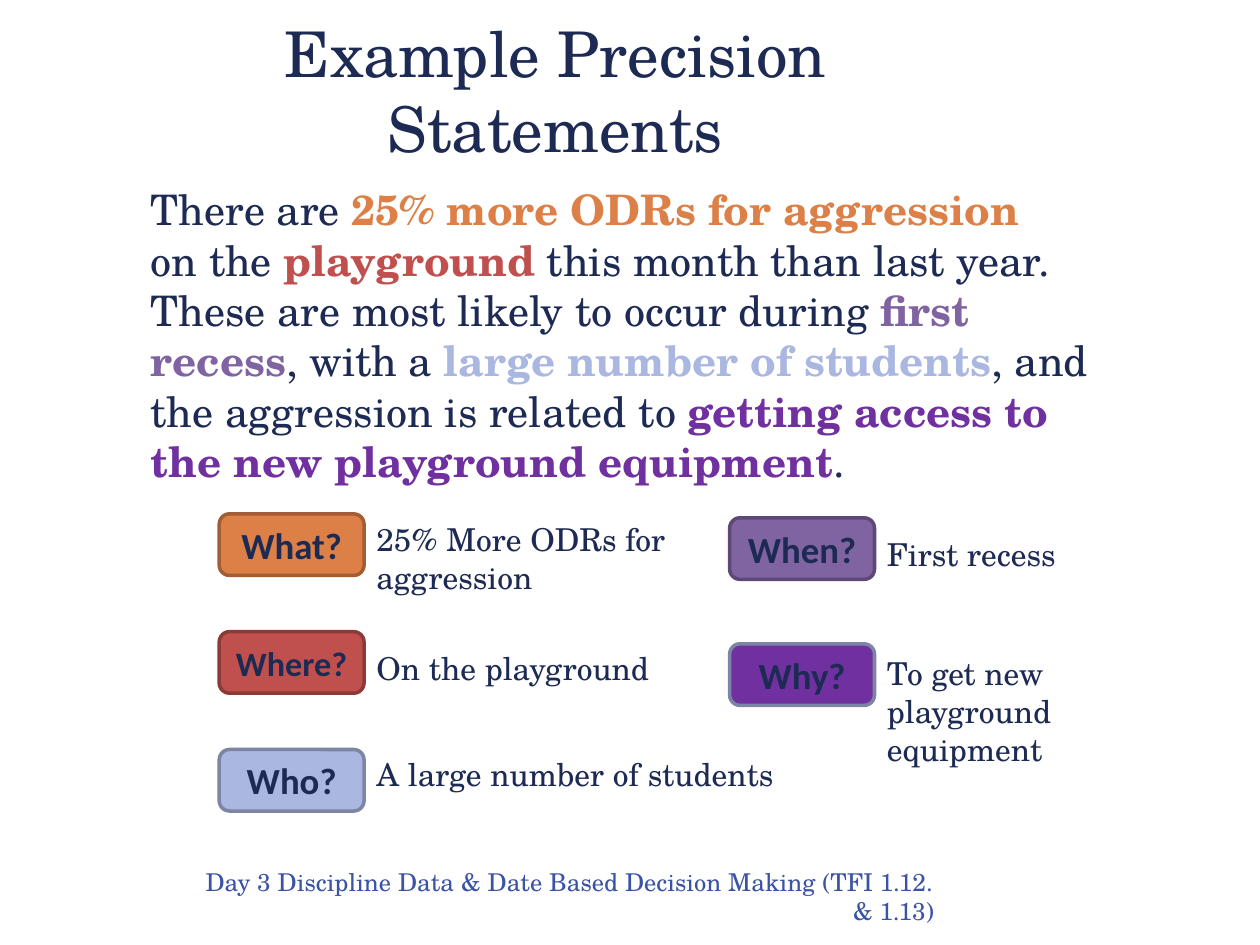
from dataclasses import dataclass

from pptx import Presentation
from pptx.dml.color import RGBColor
from pptx.enum.shapes import MSO_SHAPE
from pptx.enum.text import MSO_ANCHOR, PP_ALIGN
from pptx.util import Cm, Pt


@dataclass(frozen=True)
class Theme:
    serif: str = "TeX Gyre Schola"
    sans: str = "Calibri"
    ink: str = "1D2A53"
    footer: str = "3A53A5"
    what: str = "DD8047"
    what_edge: str = "A15D33"
    where: str = "C0504D"
    where_edge: str = "8C3A38"
    who: str = "AAB7E1"
    when: str = "8064A2"
    when_edge: str = "5D4876"
    why: str = "7030A0"
    pale_edge: str = "7C85A4"
    title_size: float = 36
    statement_size: float = 24
    badge_size: float = 21
    small_badge_size: float = 19.5
    answer_size: float = 18
    footer_size: float = 14


THEME = Theme()
LEFT_COLUMN, RIGHT_COLUMN = 4.42, 14.71
FIRST_ROW, ROW_STEP = 10.36, 2.375
BADGE_WIDTH, BADGE_HEIGHT = 2.92, 1.24


def add_run(paragraph, wording, size, color=THEME.ink, bold=False, face=THEME.serif):
    run = paragraph.add_run()
    run.text = wording
    run.font.name = face
    run.font.size = Pt(size)
    run.font.bold = bold
    run.font.color.rgb = RGBColor.from_string(color)


def add_text_area(slide, left, top, width, height,
                  align=PP_ALIGN.LEFT, anchor=MSO_ANCHOR.TOP):
    area = slide.shapes.add_textbox(Cm(left), Cm(top), Cm(width), Cm(height))
    frame = area.text_frame
    frame.word_wrap = True
    frame.vertical_anchor = anchor
    paragraph = frame.paragraphs[0]
    paragraph.alignment = align
    return paragraph


def add_badge(slide, left, top, question, fill, edge, size):
    badge = slide.shapes.add_shape(
        MSO_SHAPE.ROUNDED_RECTANGLE, Cm(left), Cm(top), Cm(BADGE_WIDTH), Cm(BADGE_HEIGHT))
    badge.shadow.inherit = False
    badge.fill.solid()
    badge.fill.fore_color.rgb = RGBColor.from_string(fill)
    badge.line.color.rgb = RGBColor.from_string(edge)
    badge.line.width = Pt(2)
    badge.text_frame.vertical_anchor = MSO_ANCHOR.MIDDLE
    label = badge.text_frame.paragraphs[0]
    label.alignment = PP_ALIGN.CENTER
    add_run(label, question, size, bold=True, face=THEME.sans)


def add_answer(slide, left, top, width, height, answer):
    paragraph = add_text_area(slide, left + BADGE_WIDTH, top, width, height)
    add_run(paragraph, answer, THEME.answer_size)


def add_statement(slide):
    statement = add_text_area(slide, 2.79, 3.58, 20.09, 11.38)

    def plain(wording):
        add_run(statement, wording, THEME.statement_size)

    def strong(wording, color):
        add_run(statement, wording, THEME.statement_size, color, bold=True)

    plain("There are ")
    strong("25% more ODRs for aggression", THEME.what)
    statement.add_line_break()
    plain("on the ")
    strong("playground", THEME.where)
    plain(" this month than last year. These are most likely to occur during ")
    strong("first recess", THEME.when)
    plain(", with a ")
    strong("large number of students", THEME.who)
    plain(", and the aggression is related to ")
    strong("getting access to the new playground equipment", THEME.why)
    plain(".")


def add_questions(slide):
    second_row, third_row = FIRST_ROW + ROW_STEP, FIRST_ROW + 2 * ROW_STEP
    normal, small = THEME.badge_size, THEME.small_badge_size
    questions = [
        (LEFT_COLUMN, FIRST_ROW, "What?", THEME.what, THEME.what_edge, normal,
         10.36, 7.01, 1.8, "25% More ODRs for aggression"),
        (LEFT_COLUMN, second_row, "Where?", THEME.where, THEME.where_edge, small,
         12.95, 7.01, 1.02, "On the playground"),
        (LEFT_COLUMN, third_row, "Who?", THEME.who, THEME.pale_edge, normal,
         15.09, 13.11, 1.02, "A large number of students"),
        (RIGHT_COLUMN, 10.44, "When?", THEME.when, THEME.when_edge, normal,
         10.67, 7.01, 1.02, "First recess"),
        (RIGHT_COLUMN, 12.98, "Why?", THEME.why, THEME.pale_edge, normal,
         13.06, 5.89, 2.57, "To get new playground equipment"),
    ]
    for (left, top, question, fill, edge, size,
         answer_top, width, height, answer) in questions:
        add_badge(slide, left, top, question, fill, edge, size)
        add_answer(slide, left, answer_top, width, height, answer)


def main():
    deck = Presentation()
    deck.slide_width, deck.slide_height = Cm(25.4), Cm(19.05)
    slide = deck.slides.add_slide(deck.slide_layouts[6])

    title = add_text_area(slide, 3.02, 0.81, 16.36, 2.01,
                          PP_ALIGN.CENTER, MSO_ANCHOR.MIDDLE)
    add_run(title, "Example Precision Statements", THEME.title_size)
    add_statement(slide)
    add_questions(slide)
    footer = add_text_area(slide, 3.48, 17.35, 15.6, 1.45, PP_ALIGN.RIGHT)
    add_run(footer, "Day 3 Discipline Data & Date Based Decision Making (TFI 1.12. & 1.13)",
            THEME.footer_size, THEME.footer)

    deck.save("out.pptx")


if __name__ == "__main__":
    main()
